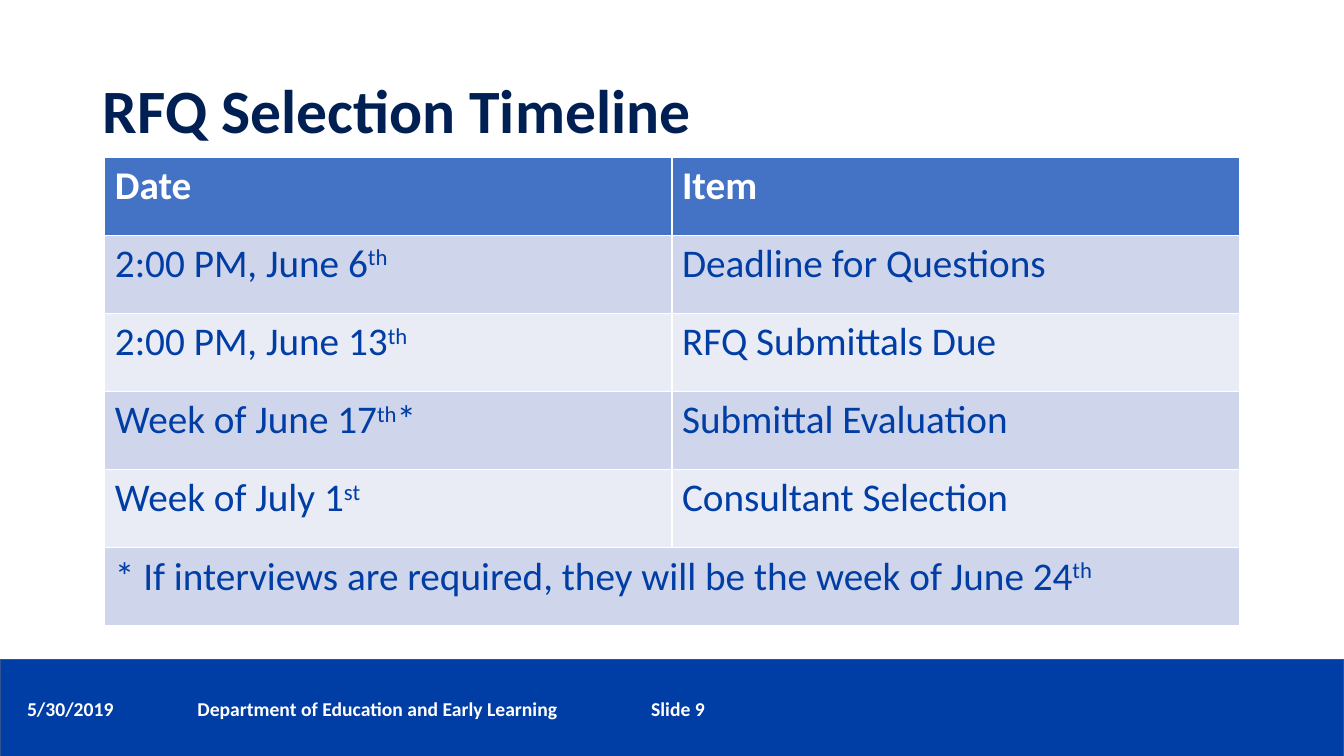
from pptx import Presentation
from pptx.dml.color import RGBColor
from pptx.enum.shapes import MSO_SHAPE
from pptx.enum.text import MSO_ANCHOR, PP_ALIGN
from pptx.util import Inches, Pt

NAVY = RGBColor(0x00, 0x1F, 0x52)
BLUE = RGBColor(0x00, 0x3D, 0xA5)
BAND_EDGE = RGBColor(0x31, 0x53, 0x8F)
HEADER_FILL = RGBColor(0x44, 0x72, 0xC4)
ROW_FILLS = (RGBColor(0xE9, 0xEB, 0xF5), RGBColor(0xCF, 0xD5, 0xEA))
WHITE = RGBColor(0xFF, 0xFF, 0xFF)
FONT = "Calibri"

HEADINGS = ("Date", "Item")
MILESTONES = [
    (("2:00 PM, June 6", "th"), "Deadline for Questions"),
    (("2:00 PM, June 13", "th"), "RFQ Submittals Due"),
    (("Week of June 17", "th", "*"), "Submittal Evaluation"),
    (("Week of July 1", "st"), "Consultant Selection"),
]
FOOTNOTE = ("* If interviews are required, they will be the week of June 24", "th")
FOOTER = [
    (0.17, 1.67, "5/30/2019"),
    (1.86, 4.06, "Department of Education and Early Learning"),
    (6.36, 1.44, "Slide 9"),
]


def add_run(paragraph, text, size, color, bold=False):
    run = paragraph.add_run()
    run.text = text
    run.font.name = FONT
    run.font.size = Pt(size)
    run.font.bold = bold
    run.font.color.rgb = color
    return run


def add_footer(slide):
    band = slide.shapes.add_shape(
        MSO_SHAPE.RECTANGLE, Inches(0), Inches(6.54), Inches(13.33), Inches(0.98))
    band.shadow.inherit = False
    band.fill.solid()
    band.fill.fore_color.rgb = BLUE
    band.line.color.rgb = BAND_EDGE
    band.line.width = Pt(1)
    for left, width, text in FOOTER:
        label = slide.shapes.add_textbox(
            Inches(left), Inches(6.83), Inches(width), Inches(0.4)).text_frame
        label.word_wrap = True
        label.vertical_anchor = MSO_ANCHOR.MIDDLE
        add_run(label.paragraphs[0], text, 14, WHITE, bold=True)


def set_title(slide, text):
    title = slide.shapes.title
    title.left, title.top = Inches(0.92), Inches(0.4)
    title.width, title.height = Inches(11.5), Inches(1.45)
    title.text_frame.vertical_anchor = MSO_ANCHOR.MIDDLE
    heading = title.text_frame.paragraphs[0]
    heading.alignment = PP_ALIGN.LEFT
    heading.line_spacing = 0.9
    add_run(heading, text, 44, NAVY, bold=True)


def fill_cell(cell, parts, fill, color, bold=False):
    cell.fill.solid()
    cell.fill.fore_color.rgb = fill
    for part in parts:
        run = add_run(cell.text_frame.paragraphs[0], part, 28, color, bold)
        if part in ("th", "st"):
            run._r.get_or_add_rPr().set("baseline", "30000")


def add_timeline(slide):
    last = len(MILESTONES) + 1
    timeline = slide.shapes.add_table(
        last + 1, 2, Inches(1.04), Inches(1.56), Inches(11.25), Inches(4.65)).table
    for column, heading in enumerate(HEADINGS):
        fill_cell(timeline.cell(0, column), [heading], HEADER_FILL, WHITE, bold=True)
    for row, (date, item) in enumerate(MILESTONES, 1):
        fill_cell(timeline.cell(row, 0), date, ROW_FILLS[row % 2], BLUE)
        fill_cell(timeline.cell(row, 1), [item], ROW_FILLS[row % 2], BLUE)
    timeline.cell(last, 0).merge(timeline.cell(last, 1))
    fill_cell(timeline.cell(last, 0), FOOTNOTE, ROW_FILLS[last % 2], BLUE)


def main():
    deck = Presentation()
    deck.slide_width, deck.slide_height = Inches(13.33), Inches(7.5)
    slide = deck.slides.add_slide(deck.slide_layouts[5])
    add_footer(slide)
    set_title(slide, "RFQ Selection Timeline")
    add_timeline(slide)
    deck.save("out.pptx")


if __name__ == "__main__":
    main()
